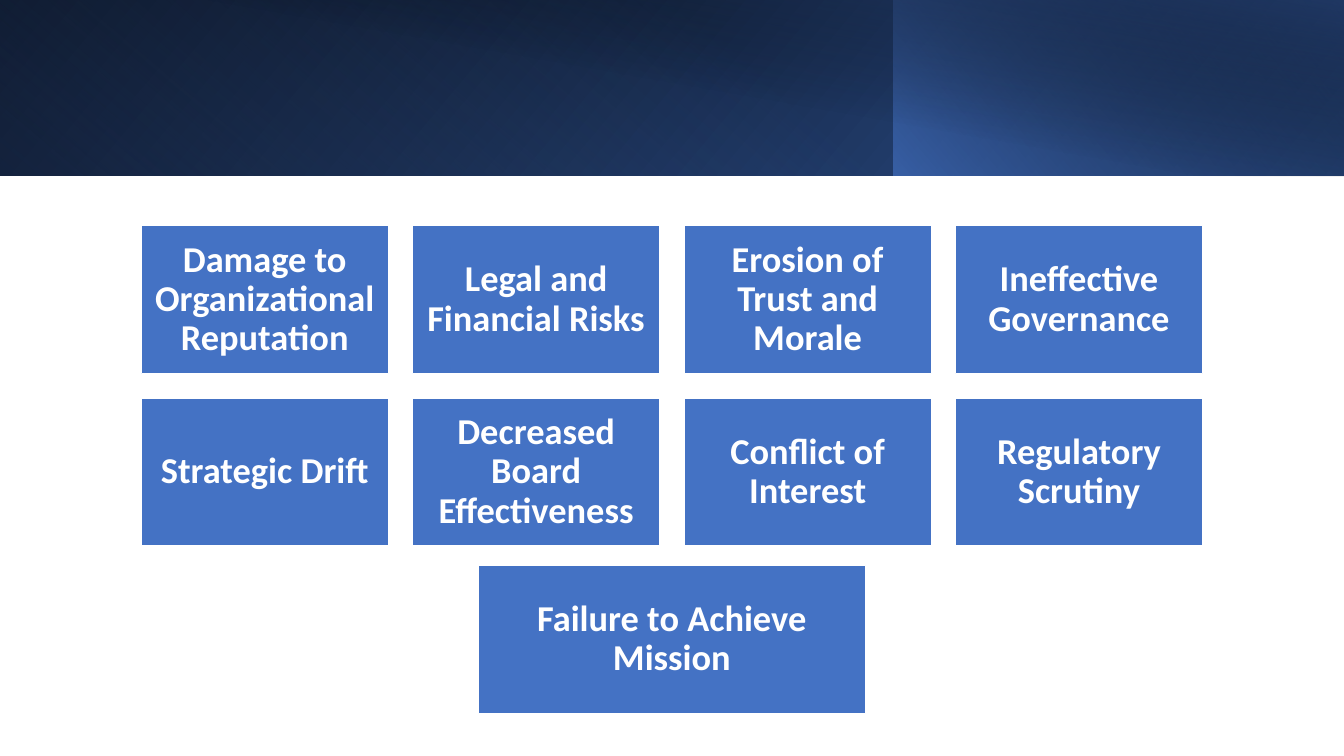
"""Build a slide of nine governance risks under a blue gradient header."""
from dataclasses import dataclass

from lxml import etree
from pptx import Presentation
from pptx.dml.color import RGBColor
from pptx.enum.shapes import MSO_SHAPE
from pptx.enum.text import MSO_ANCHOR, PP_ALIGN
from pptx.oxml.ns import qn
from pptx.util import Cm, Pt

RECTANGLE = MSO_SHAPE.RECTANGLE
MIDDLE = MSO_ANCHOR.MIDDLE
CENTER = PP_ALIGN.CENTER


@dataclass(frozen=True)
class Theme:
    white: str = "FFFFFF"
    black: str = "000000"
    blue: str = "4472C4"
    mid_blue: str = "2F5597"
    navy: str = "203864"
    font: str = "Calibri"
    size: int = 26


theme = Theme()


def add_rectangle(slide, left, top, width, height):
    shape = slide.shapes.add_shape(RECTANGLE, Cm(left), Cm(top), Cm(width), Cm(height))
    shape.shadow.inherit = False
    return shape


def set_gradient(shape, angle, stops):
    shape.fill.gradient()
    gradient = shape._element.spPr.find(qn("a:gradFill"))
    for child in list(gradient):
        gradient.remove(child)
    gradient.set("rotWithShape", "1")
    stop_list = etree.SubElement(gradient, qn("a:gsLst"))
    for position, color, opacity in stops:
        stop = etree.SubElement(stop_list, qn("a:gs"), pos=str(position * 1000))
        rgb = etree.SubElement(stop, qn("a:srgbClr"), val=color)
        if opacity < 100:
            etree.SubElement(rgb, qn("a:alpha"), val=str(opacity * 1000))
    etree.SubElement(gradient, qn("a:lin"), ang=str(angle * 60000), scaled="0")


SLIDE_WIDTH = 33.87
presentation = Presentation()
presentation.slide_width = Cm(SLIDE_WIDTH)
presentation.slide_height = Cm(19.05)
slide = presentation.slides.add_slide(presentation.slide_layouts[6])

header_layers = [
    (0, SLIDE_WIDTH, 4.43, 0, True, 140, [(0, theme.black, 100), (100, theme.mid_blue, 100)]),
    (0, 22.55, 4.43, 180, True, 230, [(20, theme.blue, 0), (100, theme.navy, 55)]),
    (22.53, 11.34, 4.43, 0, True, 220, [(0, theme.blue, 66), (100, theme.black, 30)]),
    (1.27, 32.6, 4.44, 0, False, 280, [(50, theme.black, 0), (99, theme.navy, 52)]),
]
for left, width, height, rotation, flipped, angle, stops in header_layers:
    layer = add_rectangle(slide, left, 0, width, height)
    layer.rotation = rotation
    if flipped:
        layer._element.spPr.find(qn("a:xfrm")).set("flipH", "1")
    layer.line.fill.background()
    set_gradient(layer, angle, stops)

BOX_HEIGHT = 3.73
GAP = 0.61
risk_rows = [
    (5.69, 6.23, ["Damage to Organizational Reputation", "Legal and Financial Risks",
                  "Erosion of Trust and Morale", "Ineffective Governance"]),
    (10.03, 6.23, ["Strategic Drift", "Decreased Board Effectiveness",
                   "Conflict of Interest", "Regulatory Scrutiny"]),
    (14.25, 9.75, ["Failure to Achieve Mission"]),
]
for top, box_width, risks in risk_rows:
    row_width = len(risks) * (box_width + GAP) - GAP
    row_left = (SLIDE_WIDTH - row_width) / 2
    for column, risk in enumerate(risks):
        box = add_rectangle(slide, row_left + column * (box_width + GAP), top, box_width, BOX_HEIGHT)
        box.fill.solid()
        box.fill.fore_color.rgb = RGBColor.from_string(theme.blue)
        box.line.color.rgb = RGBColor.from_string(theme.white)
        box.line.width = Pt(1)
        frame = box.text_frame
        frame.word_wrap = True
        frame.vertical_anchor = MIDDLE
        frame.margin_left = frame.margin_right = Cm(0.28)
        frame.margin_top = frame.margin_bottom = Cm(0.28)
        paragraph = frame.paragraphs[0]
        paragraph.alignment = CENTER
        paragraph.line_spacing = 0.9
        run = paragraph.add_run()
        run.text = risk
        run.font.name = theme.font
        run.font.size = Pt(theme.size)
        run.font.bold = True
        run.font.color.rgb = RGBColor.from_string(theme.white)

presentation.save("out.pptx")
